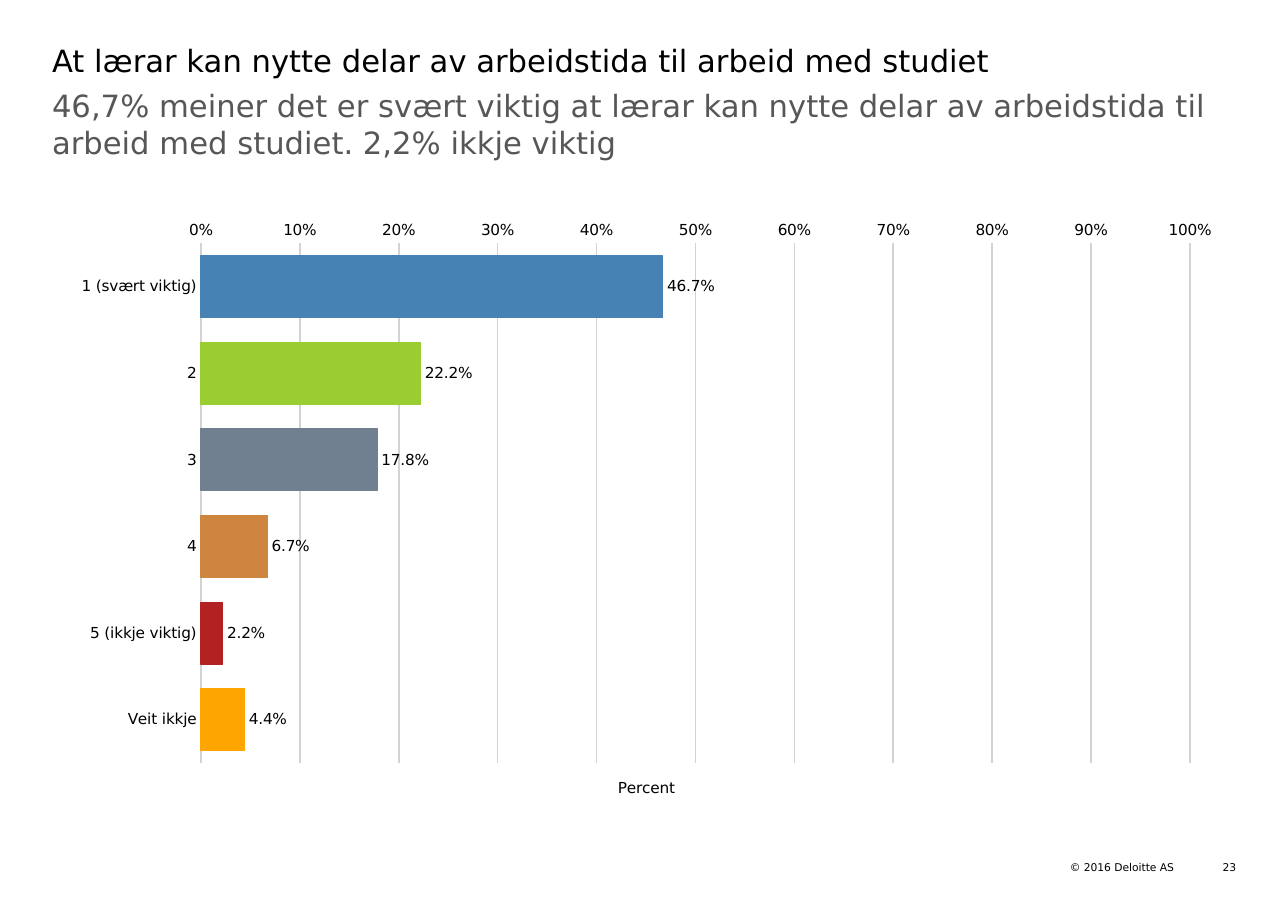
"""Build the survey slide on using working hours for study."""
from dataclasses import dataclass

from lxml import etree
from pptx import Presentation
from pptx.chart.data import CategoryChartData
from pptx.dml.color import RGBColor
from pptx.enum.chart import XL_AXIS_CROSSES, XL_CHART_TYPE, XL_LABEL_POSITION, XL_TICK_MARK
from pptx.enum.text import MSO_ANCHOR, PP_ALIGN
from pptx.oxml.ns import qn
from pptx.util import Pt

EMU_PER_PX = 8298
FONT = "DejaVu Sans"
LEFT, RIGHT = PP_ALIGN.LEFT, PP_ALIGN.RIGHT
TOP, MIDDLE = MSO_ANCHOR.TOP, MSO_ANCHOR.MIDDLE
BAR_CLUSTERED = XL_CHART_TYPE.BAR_CLUSTERED
NO_TICK = XL_TICK_MARK.NONE
AXIS_MAXIMUM = XL_AXIS_CROSSES.MAXIMUM
OUTSIDE_END = XL_LABEL_POSITION.OUTSIDE_END

COLOURS = {
    "black": "000000",
    "subtitle": "575757",
    "grid": "D3D3D3",
    "blue": "4682B4",
    "green": "9ACD32",
    "slate": "708090",
    "copper": "CD853F",
    "red": "B22222",
    "orange": "FFA500",
}


@dataclass(frozen=True)
class TextItem:
    text: str
    frame: tuple[int, int, int, int]
    size: int
    colour: str = "black"
    align: PP_ALIGN = LEFT
    anchor: MSO_ANCHOR = TOP
    wrap: bool = True


@dataclass(frozen=True)
class Answer:
    label: str
    share: float
    colour: str


TEXTS = [
    TextItem("At lærar kan nytte delar av arbeidstida til arbeid med studiet",
             (52, 42, 1184, 44), 20),
    TextItem("46,7% meiner det er svært viktig at lærar kan nytte delar av arbeidstida "
             "til arbeid med studiet. 2,2% ikkje viktig",
             (52, 87, 1184, 100), 20, "subtitle"),
    TextItem("© 2016 Deloitte AS", (1067, 861, 107, 13), 7,
             align=RIGHT, anchor=MIDDLE, wrap=False),
    TextItem("23", (1203, 861, 33, 13), 7, align=RIGHT),
]

ANSWERS = [
    Answer("1 (svært viktig)", 0.467, "blue"),
    Answer("2", 0.222, "green"),
    Answer("3", 0.178, "slate"),
    Answer("4", 0.067, "copper"),
    Answer("5 (ikkje viktig)", 0.022, "red"),
    Answer("Veit ikkje", 0.044, "orange"),
]

CHART_FRAME = (52, 222, 1184, 626)
PLOT_FRAME = (201, 234, 989, 528)


def px(length: int) -> int:
    return length * EMU_PER_PX


def rgb(name: str) -> RGBColor:
    return RGBColor.from_string(COLOURS[name])


def style_font(font, size: int, colour: str = "black") -> None:
    font.name = FONT
    font.size = Pt(size)
    font.bold = False
    font.color.rgb = rgb(colour)


def add_text(page, item: TextItem) -> None:
    box = page.shapes.add_textbox(*map(px, item.frame))
    frame = box.text_frame
    frame.margin_left = frame.margin_right = frame.margin_top = frame.margin_bottom = 0
    frame.word_wrap = item.wrap
    frame.vertical_anchor = item.anchor
    para = frame.paragraphs[0]
    para.alignment = item.align
    span = para.add_run()
    span.text = item.text
    style_font(span.font, item.size, item.colour)


def place_plot(chart) -> None:
    left, top, width, height = CHART_FRAME
    plot_left, plot_top, plot_width, plot_height = PLOT_FRAME
    plot_area = chart.plots[0]._element.getparent()
    for old in plot_area.findall(qn("c:layout")):
        plot_area.remove(old)
    layout = etree.Element(qn("c:layout"))
    plot_area.insert(0, layout)
    manual = etree.SubElement(layout, qn("c:manualLayout"))
    settings = {
        "layoutTarget": "inner",
        "xMode": "edge",
        "yMode": "edge",
        "x": (plot_left - left) / width,
        "y": (plot_top - top) / height,
        "w": plot_width / width,
        "h": plot_height / height,
    }
    for tag, value in settings.items():
        etree.SubElement(manual, qn(f"c:{tag}")).set("val", str(value))


def style_axes(chart) -> None:
    for axis in (chart.category_axis, chart.value_axis):
        axis.major_tick_mark = axis.minor_tick_mark = NO_TICK
        axis.format.line.fill.background()
        style_font(axis.tick_labels.font, 10)
    chart.category_axis.reverse_order = True
    chart.category_axis.crosses = AXIS_MAXIMUM
    axis = chart.value_axis
    axis.minimum_scale, axis.maximum_scale, axis.major_unit = 0, 1, 0.1
    axis.tick_labels.number_format = "0%"
    axis.tick_labels.number_format_is_linked = False
    grid = axis.major_gridlines.format.line
    grid.color.rgb = rgb("grid")
    grid.width = Pt(1)
    span = axis.axis_title.text_frame.paragraphs[0].add_run()
    span.text = "Percent"
    style_font(span.font, 10)


def add_answer_chart(page) -> None:
    data = CategoryChartData(number_format="0.0%")
    data.categories = [answer.label for answer in ANSWERS]
    data.add_series("Series 1", [answer.share for answer in ANSWERS])
    chart = page.shapes.add_chart(BAR_CLUSTERED, *map(px, CHART_FRAME), data).chart
    chart.has_legend = chart.has_title = False
    style_font(chart.font, 18)
    style_axes(chart)
    place_plot(chart)
    plot = chart.plots[0]
    plot.gap_width = 40
    plot.vary_by_categories = False
    series = plot.series[0]
    for index, answer in enumerate(ANSWERS):
        look = series.points[index].format
        look.fill.solid()
        look.fill.fore_color.rgb = rgb(answer.colour)
        look.line.color.rgb = rgb(answer.colour)
        look.line.width = Pt(0.75)
    labels = series.data_labels
    labels.show_value = True
    labels.number_format = "0.0%"
    labels.number_format_is_linked = False
    labels.position = OUTSIDE_END
    style_font(labels.font, 10)


def main() -> None:
    deck = Presentation()
    deck.slide_width, deck.slide_height = px(1288), px(911)
    page = deck.slides.add_slide(deck.slide_layouts[6])
    for item in TEXTS:
        add_text(page, item)
    add_answer_chart(page)
    deck.save("out.pptx")


if __name__ == "__main__":
    main()
